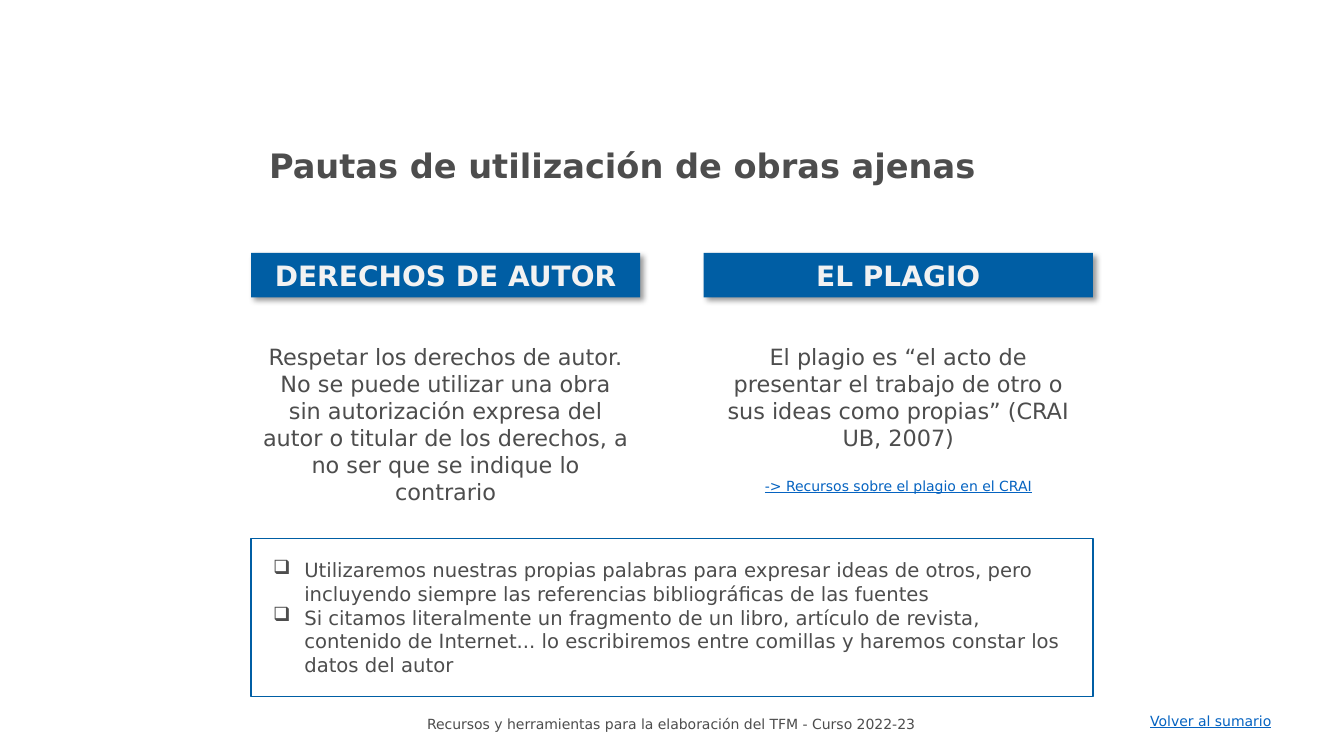
from lxml.etree import SubElement
from pptx import Presentation
from pptx.dml.color import RGBColor
from pptx.enum.shapes import MSO_SHAPE
from pptx.enum.text import MSO_ANCHOR, PP_ALIGN
from pptx.oxml.ns import qn
from pptx.util import Inches, Pt

FONT = "DejaVu Sans"
GREY, BLUE, LINK, PALE = "4D4D4D", "005EA4", "0563C1", "F2F2F2"
LEFT, FULL_WIDTH, COLUMN_WIDTH = 2.49, 8.35, 3.86

COLUMNS = [
    ("DERECHOS DE AUTOR",
     "Respetar los derechos de autor. No se puede utilizar una obra sin "
     "autorización expresa del autor o titular de los derechos, a no ser que "
     "se indique lo contrario"),
    ("EL PLAGIO",
     "El plagio es “el acto de presentar el trabajo de otro o sus ideas como "
     "propias” (CRAI UB, 2007)"),
]
PLAGIARISM_LINK = "-> Recursos sobre el plagio en el CRAI"
GUIDELINES = [
    "Utilizaremos nuestras propias palabras para expresar ideas de otros, pero "
    "incluyendo siempre las referencias bibliográficas de las fuentes",
    "Si citamos literalmente un fragmento de un libro, artículo de revista, "
    "contenido de Internet... lo escribiremos entre comillas y haremos constar "
    "los datos del autor",
]


def color(value):
    return RGBColor.from_string(value)


def write(paragraph, text, size, ink=GREY, bold=False, underline=False,
          align=PP_ALIGN.LEFT):
    paragraph.text = text
    paragraph.alignment = align
    for run in paragraph.runs:
        run.font.name = FONT
        run.font.size = Pt(size)
        run.font.bold = bold
        run.font.underline = underline
        run.font.color.rgb = color(ink)


def add_text(slide, left, top, width, height, text, size, wrap=True, **style):
    box = slide.shapes.add_textbox(
        Inches(left), Inches(top), Inches(width), Inches(height))
    box.text_frame.word_wrap = wrap
    write(box.text_frame.paragraphs[0], text, size, **style)
    return box.text_frame


def add_rectangle(slide, left, top, width, height):
    shape = slide.shapes.add_shape(
        MSO_SHAPE.RECTANGLE,
        Inches(left), Inches(top), Inches(width), Inches(height))
    shape.shadow.inherit = False
    return shape


def add_shadow(shape):
    effects = shape._element.spPr.find(qn("a:effectLst"))
    shadow = SubElement(effects, qn("a:outerShdw"), blurRad=str(Pt(4)),
                        dist=str(Pt(3)), dir="2700000", algn="tl",
                        rotWithShape="0")
    black = SubElement(shadow, qn("a:srgbClr"), val="000000")
    SubElement(black, qn("a:alpha"), val="40000")


def add_heading(slide, left, text):
    shape = add_rectangle(slide, left, 2.51, COLUMN_WIDTH, 0.44)
    shape.fill.solid()
    shape.fill.fore_color.rgb = color(BLUE)
    shape.line.fill.background()
    add_shadow(shape)
    shape.text_frame.word_wrap = True
    shape.text_frame.vertical_anchor = MSO_ANCHOR.MIDDLE
    write(shape.text_frame.paragraphs[0], text, 20, PALE, bold=True,
          align=PP_ALIGN.CENTER)


def add_bullet(paragraph):
    properties = paragraph._p.get_or_add_pPr()
    properties.set("marL", str(Inches(0.31)))
    properties.set("indent", str(Inches(-0.31)))
    SubElement(properties, qn("a:buChar"), char="❑")


def add_guidelines(slide):
    frame = add_rectangle(slide, LEFT, 5.34, FULL_WIDTH, 1.57)
    frame.fill.background()
    frame.line.color.rgb = color(BLUE)
    frame.line.width = Pt(1)
    text_frame = add_text(slide, 2.61, 5.49, 8.11, 1.28, GUIDELINES[0], 14)
    write(text_frame.add_paragraph(), GUIDELINES[1], 14)
    for paragraph in text_frame.paragraphs:
        add_bullet(paragraph)


def main():
    presentation = Presentation()
    presentation.slide_width = Inches(13.33)
    presentation.slide_height = Inches(7.5)
    slide = presentation.slides.add_slide(presentation.slide_layouts[6])

    # Footer
    add_text(slide, 2.68, 7.05, 7.95, 0.27,
             "Recursos y herramientas para la elaboración del TFM - Curso 2022-23",
             10, align=PP_ALIGN.CENTER)
    add_text(slide, 11.31, 7.02, 1.44, 0.27, "Volver al sumario", 10,
             wrap=False, ink=LINK, underline=True)

    # Title
    add_text(slide, 2.57, 1.39, FULL_WIDTH, 0.5,
             "Pautas de utilización de obras ajenas", 24, bold=True)

    # Two columns, flush with both ends of the guidelines frame
    for index, (heading, body) in enumerate(COLUMNS):
        left = LEFT + index * (FULL_WIDTH - COLUMN_WIDTH)
        add_heading(slide, left, heading)
        text_frame = add_text(slide, left, 3.36, COLUMN_WIDTH, 1.8, body, 16,
                              align=PP_ALIGN.CENTER)

    # Link under the last column
    link = text_frame.add_paragraph()
    link.space_before = Pt(19)
    write(link, PLAGIARISM_LINK, 10, LINK, underline=True,
          align=PP_ALIGN.CENTER)

    # Framed guidelines
    add_guidelines(slide)
    presentation.save("out.pptx")


if __name__ == "__main__":
    main()
